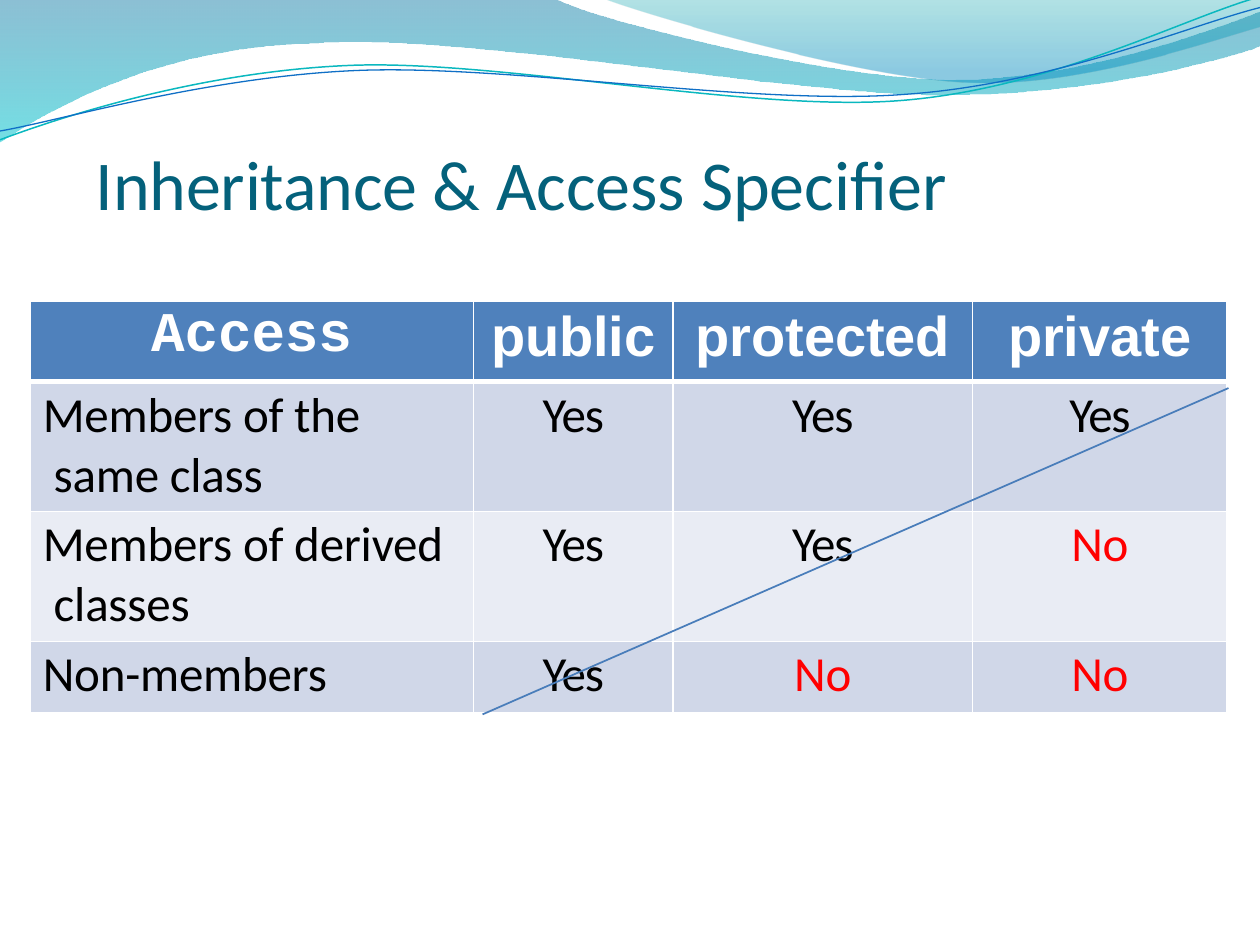
from pptx import Presentation
from pptx.dml.color import RGBColor
from pptx.enum.shapes import MSO_CONNECTOR as Conn
from pptx.enum.text import MSO_ANCHOR as Anchor, MSO_AUTO_SIZE as Auto, PP_ALIGN as Align
from pptx.oxml.ns import qn
from pptx.util import Inches, Pt
from lxml.etree import SubElement as Sub

WHITE, BLACK, RED = "FFFFFF", "000000", "FF0000"
HEADS = ["Access", "public", "protected", "private"]
ROWS = [
    ["Members of the\n same class", "Yes", "Yes", "Yes"],
    ["Members of derived\n classes", "Yes", "Yes", "No"],
    ["Non-members", "Yes", "No", "No"],
]
COLS = [3.52, 1.58, 2.38, 2.02]
HIGHS = [0.64, 1.03, 1.03, 0.57]
BANDS = ["4F81BC", "D0D7E8", "E9ECF4", "D0D7E8"]

# Wave outlines: a pair is a corner, a six is a cubic curve
WIDE = [(0, 0), (4.4, -0.01), (4.76, 0.17, 6.64, 0.63, 7.58, 0.63),
        (8.53, 0.63, 9.58, 0.26, 10, 0.09), (10.01, 0.36),
        (9.83, 0.44, 8.7, 0.76, 7.46, 0.75), (6.22, 0.75, 3.82, 0.28, 2.57, 0.34),
        (1.29, 0.36, 0.46, 0.83, -0.01, 1.13)]
SMALL = [(4.79, -0.01), (5.09, 0.11, 6.82, 0.62, 7.69, 0.65),
         (8.56, 0.69, 9.61, 0.32, 10, 0.21), (10, 0)]
TEAL = [(0, 1.11), (0.48, 0.93, 1.58, 0.57, 2.77, 0.52),
        (3.95, 0.47, 5.93, 0.89, 7.13, 0.8), (8.33, 0.71, 9.38, 0.15, 9.98, -0.02)]
BLUE = [(0, 1.04), (0.47, 0.96, 1.64, 0.61, 2.83, 0.56),
        (4.03, 0.51, 5.97, 0.84, 7.17, 0.75), (8.36, 0.67, 9.41, 0.21, 10, 0.06)]


def paint(color, code):
    color.rgb = RGBColor.from_string(code)


def add_path(slide, parts, close):
    dots = [(Inches(p[i]), Inches(p[i + 1])) for p in parts for i in range(0, len(p), 2)]
    pen = slide.shapes.build_freeform(*dots[0], scale=1.0)
    pen.add_line_segments(dots[1:], close=close)
    shape = pen.convert_to_shape()
    shape.shadow.inherit = False
    # Join each run of three points into one curve
    legs = iter(list(shape.element.iter(qn("a:lnTo"))))
    for part in parts[1:]:
        leg = next(legs)
        if len(part) == 6:
            curve = leg.makeelement(qn("a:cubicBezTo"))
            leg.addprevious(curve)
            for old in (leg, next(legs), next(legs)):
                curve.append(old[0])
                old.getparent().remove(old)
    return shape


def add_wave(slide, parts, stops):
    shape = add_path(slide, parts, True)
    shape.line.fill.background()
    shape.fill.gradient()
    shape.fill.gradient_angle = 270
    for stop, (place, code, _) in zip(shape.fill.gradient_stops, stops):
        stop.position = place
        paint(stop.color, code)
    for tag, (_, _, alpha) in zip(shape.element.iter(qn("a:gs")), stops):
        Sub(tag[0], qn("a:alpha"), val=str(alpha * 1000))


def add_curve(slide, parts, code, width):
    shape = add_path(slide, parts, False)
    shape.fill.background()
    paint(shape.line.color, code)
    shape.line.width = Pt(width)


def add_run(para, text, size, font, code, bold=False, gap=0):
    run = para.add_run()
    run.text = text
    face = run.font
    face.size, face.name, face.bold = Pt(size), font, bold
    paint(face.color, code)
    run._r.get_or_add_rPr().set("spc", str(round(gap * 100)))


def indent(para, left):
    para._p.get_or_add_pPr().set("marL", str(Inches(left)))


def set_title(slide):
    title = slide.shapes.title
    title.left, title.top = Inches(0.75), Inches(1.09)
    title.width, title.height = Inches(8.24), Inches(0.69)
    frame = title.text_frame
    frame.margin_left = frame.margin_right = frame.margin_bottom = 0
    frame.margin_top = Inches(0.01)
    frame.vertical_anchor = Anchor.BOTTOM
    frame.auto_size = Auto.SHAPE_TO_FIT_TEXT
    para = frame.paragraphs[0]
    para.alignment = Align.LEFT
    para.space_before = Pt(1.1)
    indent(para, 0.01)
    add_run(para, "Inheritance ", 40, "Calibri", "04617B", gap=-0.1)
    add_run(para, "& Access Specifier", 40, "Calibri", "04617B")


def set_edges(cell, row):
    props = cell._tc.get_or_add_tcPr()
    wide = {"T": 3 if row == 1 else 1, "B": 3 if row == 0 else 1}
    for side in "LRTB":
        line = Sub(props, qn("a:ln" + side), w=str(Pt(wide.get(side, 1))))
        Sub(Sub(line, qn("a:solidFill")), qn("a:srgbClr"), val=WHITE)


def fill_cell(cell, text, row, col):
    set_edges(cell, row)
    cell.fill.solid()
    paint(cell.fill.fore_color, BANDS[row])
    cell.margin_left = cell.margin_right = cell.margin_bottom = 0
    cell.margin_top = Inches(0.03 if row else 0.04 if col else 0)
    para = cell.text_frame.paragraphs[0]
    para.alignment = Align.CENTER if col else Align.LEFT
    if col == 0:
        indent(para, 0.1 if row else 0.96)
    if row or col:
        para.space_before = Pt(1.8 if row else 2.7)
    else:
        para.line_spacing = Pt(38.2)
    for i, part in enumerate(text.split("\n")):
        if i:
            para.add_line_break()
        if row:
            code = RED if text == "No" else BLACK
            gap = -0.7 if text == "Yes" else -0.1
            add_run(para, part, 28, "Calibri", code, gap=gap)
        else:
            font = "Arial" if col else "Courier New"
            add_run(para, part, 32, font, WHITE, True, 0 if col == 3 else -0.1)


def add_grid(slide):
    data = [HEADS] + ROWS
    frame = slide.shapes.add_table(len(data), len(COLS), Inches(0.24), Inches(2.39),
                                   Inches(sum(COLS)), Inches(sum(HIGHS)))
    table = frame.table
    table.horz_banding = False
    for col, width in zip(table.columns, COLS):
        col.width = Inches(width)
    for r, texts in enumerate(data):
        table.rows[r].height = Inches(HIGHS[r])
        for c, text in enumerate(texts):
            fill_cell(table.cell(r, c), text, r, c)


def add_line(slide, start, end, code, width):
    ends = [Inches(v) for v in start + end]
    line = slide.shapes.add_connector(Conn.STRAIGHT, *ends)
    paint(line.line.color, code)
    line.line.width = Pt(width)
    Sub(line._element.spPr, qn("a:effectLst"))


def main():
    deck = Presentation()
    deck.slide_width, deck.slide_height = Inches(10), Inches(7.5)
    slide = deck.slides.add_slide(deck.slide_layouts[5])
    # Waves along the top
    add_wave(slide, WIDE, [(0, "0074A1", 45), (1, "00C6CF", 55)])
    add_wave(slide, SMALL, [(0, "00A1A9", 30), (0.8, "008BBF", 45)])
    add_curve(slide, TEAL, "0AB8BF", 0.85)
    add_curve(slide, BLUE, "0F6FC6", 0.75)
    # Title, access table and the diagonal across it
    set_title(slide)
    add_grid(slide)
    add_line(slide, (3.83, 5.67), (9.75, 3.08), "497DBA", 1)
    deck.save("out.pptx")


if __name__ == "__main__":
    main()
